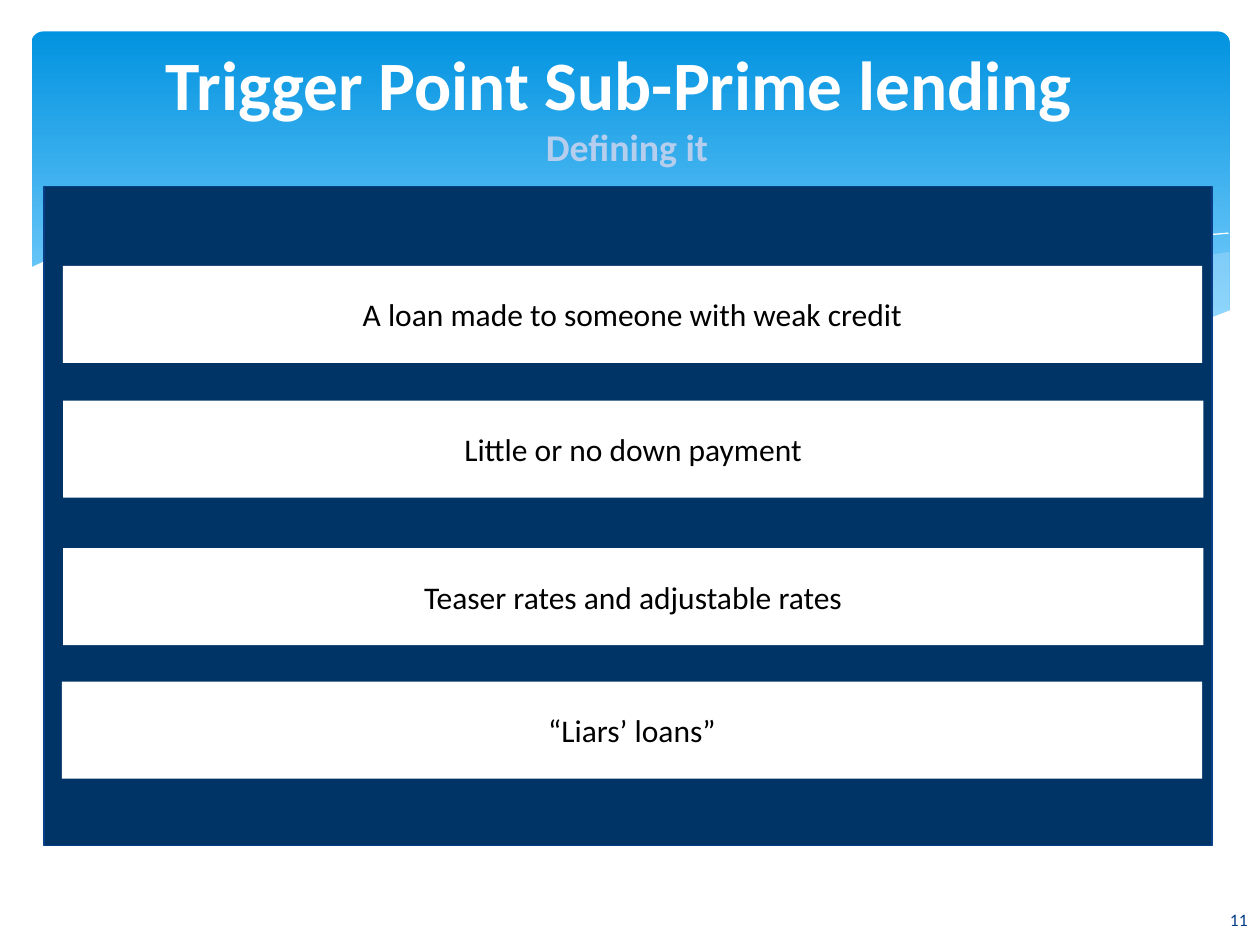
from dataclasses import dataclass

from lxml.etree import SubElement
from pptx import Presentation
from pptx.dml.color import RGBColor
from pptx.enum.shapes import MSO_SHAPE
from pptx.enum.text import MSO_ANCHOR, PP_ALIGN
from pptx.oxml.ns import qn
from pptx.util import Pt

PX = 9144  # EMU per px, 100 px to the inch


@dataclass(frozen=True)
class Theme:
    font: str = "Calibri"
    white: str = "FFFFFF"
    black: str = "000000"
    navy: str = "003366"
    blue: str = "073E87"
    subtitle: str = "B5CEED"
    sky_top: str = "0293E0"
    sky_bottom: str = "83D3FE"
    mist: str = "C6E7FC"
    title_size: float = 39.6
    subtitle_size: float = 21.6
    body_size: float = 18
    number_size: float = 10


class Deck:
    def __init__(self, prs, theme):
        self.theme = theme
        self.s = prs.slides.add_slide(prs.slide_layouts[6])

    def paint(self, sp, fill=None, line=None, width=0.75):
        sp.shadow.inherit = False
        if fill:
            sp.fill.solid()
            sp.fill.fore_color.rgb = RGBColor.from_string(fill)
        else:
            sp.fill.background()
        if line:
            sp.line.color.rgb = RGBColor.from_string(line)
            sp.line.width = Pt(width)
        else:
            sp.line.fill.background()

    def shape(self, kind, box, adj=None, **style):
        sp = self.s.shapes.add_shape(kind, *(v * PX for v in box))
        if adj is not None:
            sp.adjustments[0] = adj
        self.paint(sp, **style)
        return sp

    def banner(self, box):
        sp = self.shape(MSO_SHAPE.ROUNDED_RECTANGLE, box, 0.034)
        sp.fill.gradient()
        sp.fill.gradient_angle = 270
        stops = ((0, self.theme.sky_top), (0.9, self.theme.sky_bottom))
        for stop, (position, color) in zip(sp.fill.gradient_stops, stops):
            stop.position = position
            stop.color.rgb = RGBColor.from_string(color)

    def wave(self, points, close=True, alpha=None, **style):
        builder = self.s.shapes.build_freeform(*points[0], scale=PX)
        builder.add_line_segments(points[1:], close=close)
        sp = builder.convert_to_shape()
        self.paint(sp, **style)
        if alpha:
            color = next(sp._element.spPr.iter(qn("a:srgbClr")))
            SubElement(color, qn("a:alpha")).set("val", str(alpha * 1000))

    def set_text(self, sp, runs, align=PP_ALIGN.CENTER, inset=10):
        tf = sp.text_frame
        frame = {"word_wrap": True, "vertical_anchor": MSO_ANCHOR.MIDDLE,
                 "margin_left": inset * PX, "margin_right": inset * PX,
                 "margin_top": inset * PX // 2, "margin_bottom": inset * PX // 2}
        for name, value in frame.items():
            setattr(tf, name, value)
        p = tf.paragraphs[0]
        p.alignment = align
        for i, (text, size, color, bold) in enumerate(runs):
            if i:
                p.add_line_break()
            r = p.add_run()
            r.text = text
            for name, value in {"name": self.theme.font, "size": Pt(size), "bold": bold}.items():
                setattr(r.font, name, value)
            r.font.color.rgb = RGBColor.from_string(color)

    def text(self, box, runs, **style):
        self.set_text(self.s.shapes.add_textbox(*(v * PX for v in box)), runs, **style)

    def bar(self, box, text):
        sp = self.shape(MSO_SHAPE.PENTAGON, box, 0, fill=self.theme.white)
        self.set_text(sp, [(text, self.theme.body_size, self.theme.black, False)])


# Wave outlines, in px
MIST = [(975, 200), (948, 204), (921, 210), (891, 216), (861, 223), (805, 237),
        (753, 248), (706, 257), (661, 265), (691, 269), (719, 272), (745, 275),
        (769, 277), (803, 278), (835, 277), (863, 275), (889, 272), (913, 267),
        (935, 262), (949, 257), (963, 252), (976, 247), (976, 200)]
CREST = [(613, 257), (653, 246), (695, 235), (748, 223), (806, 210), (866, 199),
         (895, 194), (924, 190), (951, 187), (975, 185)]
FOAM = [(977, 246), (959, 253), (940, 259), (920, 265), (899, 269), (875, 273),
        (850, 275), (823, 277), (793, 276), (761, 275), (726, 272), (688, 268),
        (648, 262), (603, 254), (555, 245), (503, 233), (447, 220), (391, 207),
        (340, 197), (292, 190), (250, 186), (211, 184), (177, 184), (146, 185),
        (119, 187), (95, 191), (76, 195), (59, 199), (46, 203), (36, 207),
        (23, 213), (23, 329), (977, 329)]

# Left, top and width of each bar with its wording
BARS = [(50, 211, 904, "A loan made to someone with weak credit"),
        (50, 318, 905, "Little or no down payment"),
        (50, 435, 905, "Teaser rates and adjustable rates"),
        (49, 541, 905, "“Liars’ loans”")]
BAR_HEIGHT = 77


def main():
    prs = Presentation()
    prs.slide_width, prs.slide_height = 1000 * PX, 750 * PX
    theme = Theme()
    deck = Deck(prs, theme)

    # Banner with waves
    deck.banner((25, 25, 951, 270))
    deck.wave(MIST, fill=theme.mist, alpha=29)
    deck.wave(CREST, close=False, line=theme.white, width=0)
    deck.wave(FOAM, fill=theme.white)

    # Title
    deck.text((33, 25, 929, 117), [
        ("Trigger Point Sub-Prime lending ", theme.title_size, theme.white, True),
        ("Defining it", theme.subtitle_size, theme.subtitle, True)])

    # Panel with the four traits
    deck.shape(MSO_SHAPE.RECTANGLE, (35, 148, 927, 523), fill=theme.navy, line=theme.blue)
    for left, top, width, text in BARS:
        deck.bar((left, top, width, BAR_HEIGHT), text)

    # Slide number
    deck.text((873, 710, 127, 40), [("11", theme.number_size, theme.blue, False)],
              align=PP_ALIGN.RIGHT)

    prs.save("out.pptx")


if __name__ == "__main__":
    main()
